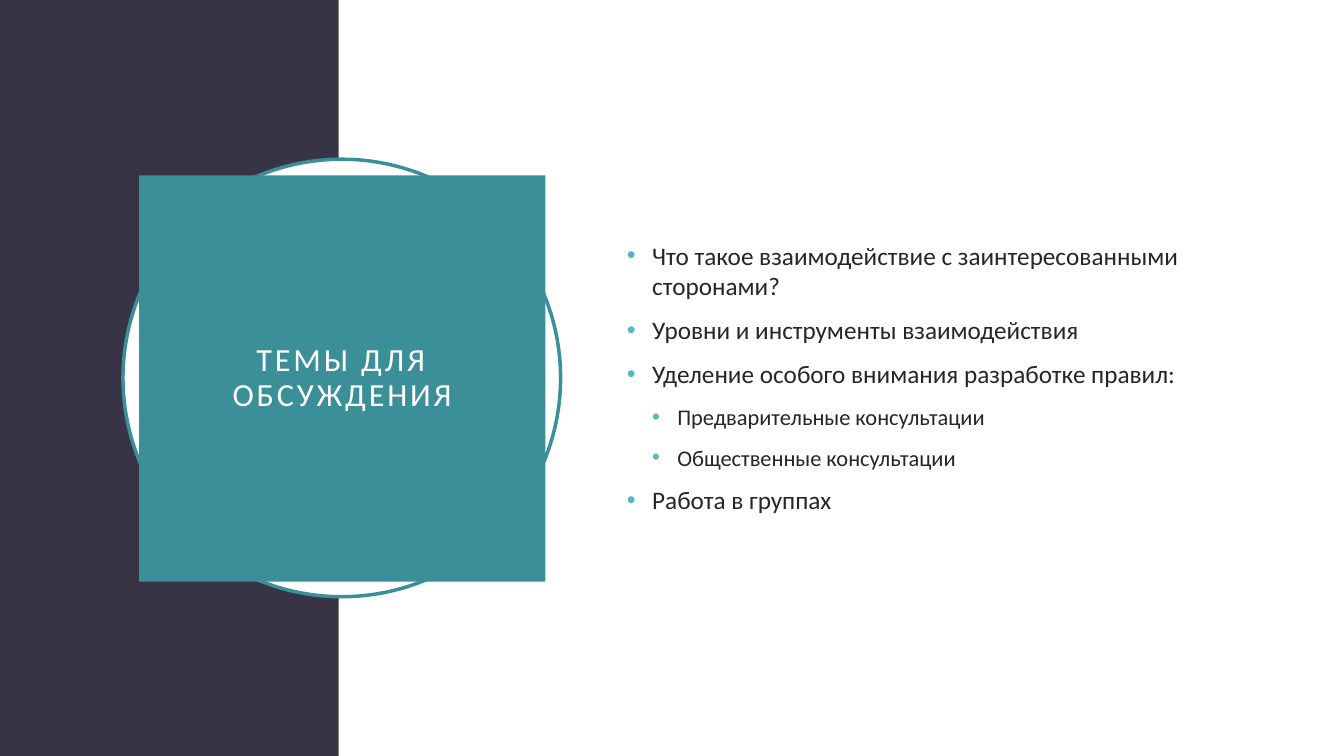
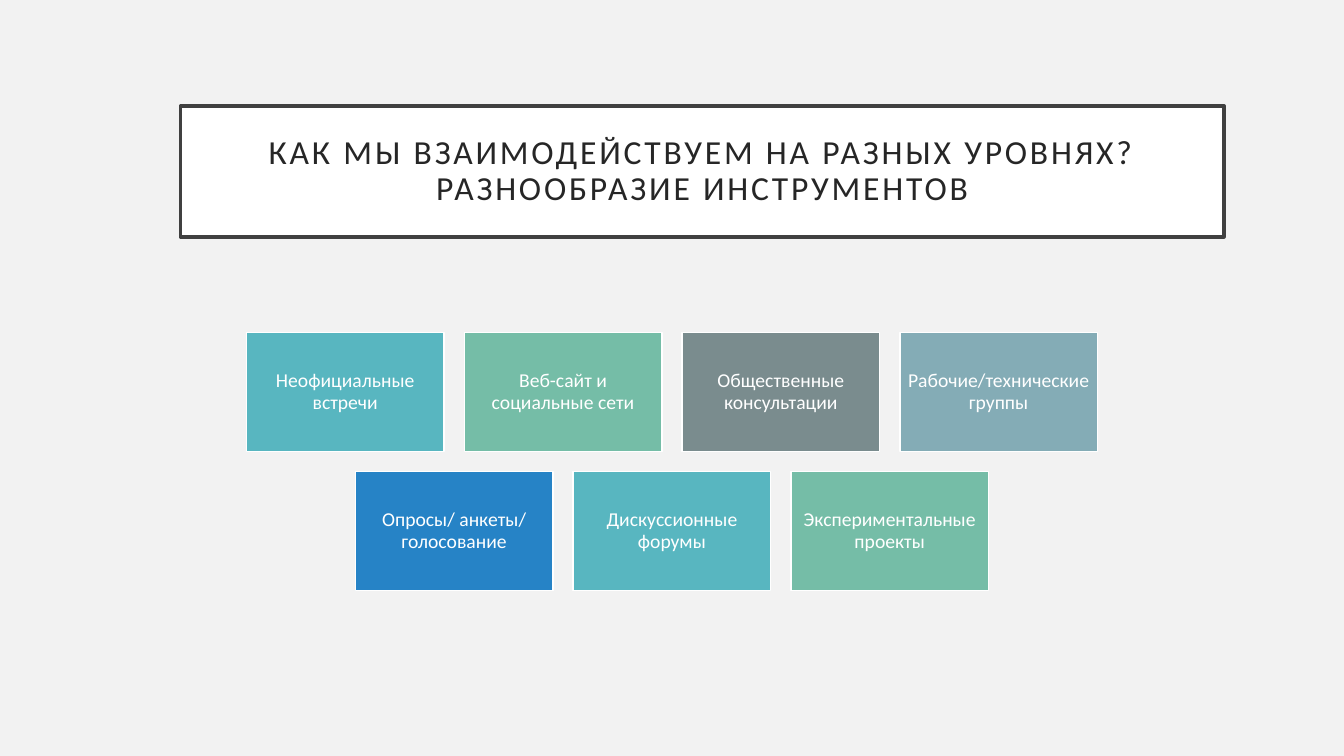
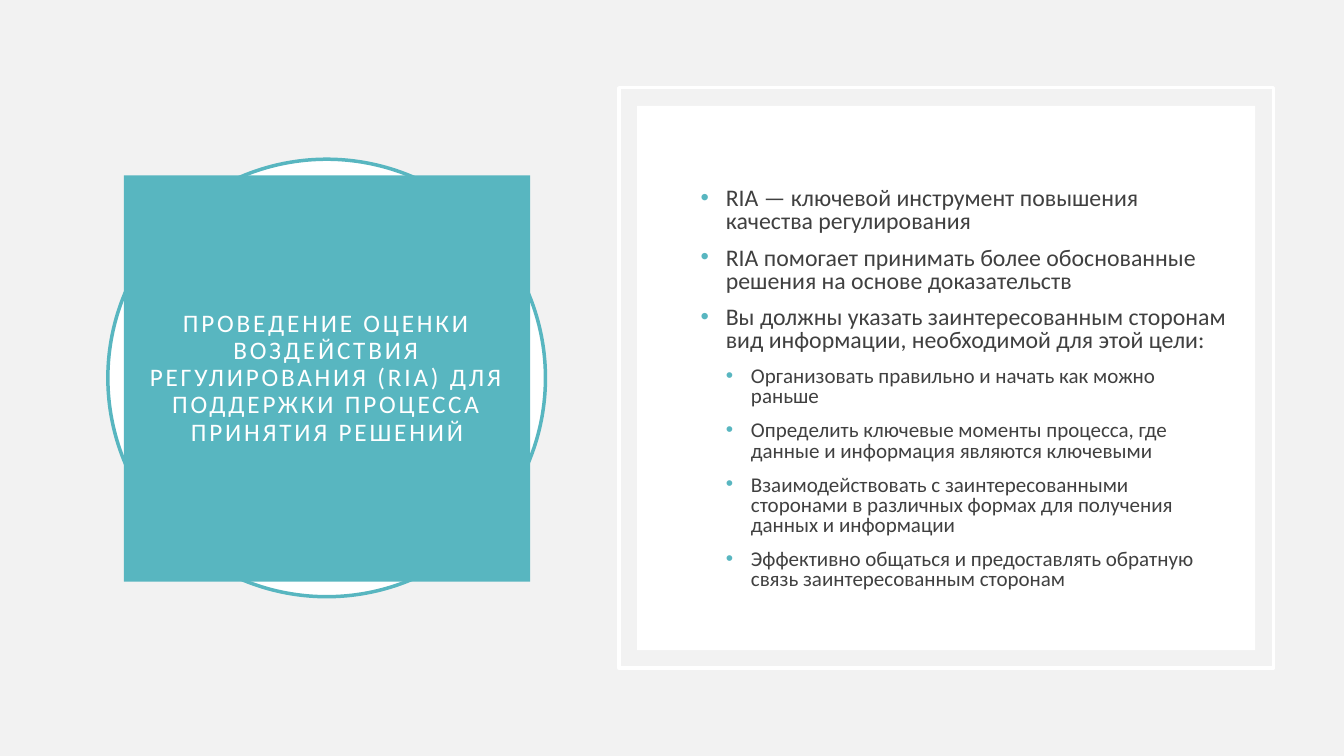
from lxml import etree
from pptx import Presentation
from pptx.dml.color import RGBColor
from pptx.enum import shapes, text
from pptx.oxml import ns
from pptx.util import Inches, Pt

SLIDE_W, SLIDE_H = 13.33, 7.5
FONT = "Calibri"
WHITE = RGBColor(0xFF, 0xFF, 0xFF)
PALE = RGBColor(0xF2, 0xF2, 0xF2)
NAVY = RGBColor(0x37, 0x35, 0x45)
INK = RGBColor(0x26, 0x26, 0x26)
CHARCOAL = RGBColor(0x40, 0x40, 0x40)
TEAL = RGBColor(0x3A, 0x8F, 0x98)
AQUA = RGBColor(0x58, 0xB6, 0xC0)
GREEN = RGBColor(0x75, 0xBD, 0xA7)
GREY = RGBColor(0x7A, 0x8C, 0x8E)
STEEL = RGBColor(0x84, 0xAC, 0xB6)
BLUE = RGBColor(0x26, 0x83, 0xC6)

RECT = shapes.MSO_SHAPE.RECTANGLE
OVAL = shapes.MSO_SHAPE.OVAL

TOPICS = [
    (0, "Что такое взаимодействие с заинтересованными сторонами?"),
    (0, "Уровни и инструменты взаимодействия"),
    (0, "Уделение особого внимания разработке правил:"),
    (1, "Предварительные консультации"),
    (1, "Общественные консультации"),
    (0, "Работа в группах"),
]
TOOL_ROWS = [
    [
        ("Неофициальные встречи", AQUA),
        ("Веб-сайт и социальные сети", GREEN),
        ("Общественные консультации", GREY),
        ("Рабочие/технические группы", STEEL),
    ],
    [
        ("Опросы/ анкеты/ голосование", BLUE),
        ("Дискуссионные форумы", AQUA),
        ("Экспериментальные проекты", GREEN),
    ],
]
RIA_POINTS = [
    (0, "RIA — ключевой инструмент повышения качества регулирования"),
    (0, "RIA помогает принимать более обоснованные решения на основе доказательств"),
    (0, "Вы должны указать заинтересованным сторонам вид информации, необходимой для этой цели:"),
    (1, "Организовать правильно и начать как можно раньше"),
    (1, "Определить ключевые моменты процесса, где данные и информация являются ключевыми"),
    (1, "Взаимодействовать с заинтересованными сторонами в различных формах для получения данных и информации"),
    (1, "Эффективно общаться и предоставлять обратную связь заинтересованным сторонам"),
]


def add_slide(deck, background):
    slide = deck.slides.add_slide(deck.slide_layouts[6])
    slide.background.fill.solid()
    slide.background.fill.fore_color.rgb = background
    return slide


def add_block(slide, preset, box, fill=None, line=None, line_width=2.5):
    block = slide.shapes.add_shape(preset, *map(Inches, box))
    block.shadow.inherit = False
    if fill is None:
        block.fill.background()
    else:
        block.fill.solid()
        block.fill.fore_color.rgb = fill
    if line is None:
        block.line.fill.background()
    else:
        block.line.color.rgb = line
        block.line.width = Pt(line_width)
    return block


def add_run(paragraph, words, size, color):
    run = paragraph.add_run()
    run.text = words
    run.font.name = FONT
    run.font.size = Pt(size)
    run.font.color.rgb = color
    return run


def write_centred(block, words, size, color, inset):
    frame = block.text_frame
    frame.word_wrap = True
    frame.vertical_anchor = text.MSO_ANCHOR.MIDDLE
    frame.margin_left = frame.margin_right = Inches(inset)
    frame.margin_top = frame.margin_bottom = Inches(inset)
    paragraph = frame.paragraphs[0]
    paragraph.alignment = text.PP_ALIGN.CENTER
    paragraph.line_spacing = 0.9
    return add_run(paragraph, words, size, color)


def write_title(block, words, size, color):
    run = write_centred(block, words, size, color, 0.2)
    run.font._element.set("spc", "200")


def add_title_badge(slide, left, words, size, color):
    add_block(slide, OVAL, (left, 1.58, 4.34, 4.34), WHITE, color)
    square = add_block(slide, RECT, (left + 0.16, 1.74, 4.03, 4.03), color)
    write_title(square, words, size, WHITE)


def add_bullet(paragraph, level):
    properties = paragraph._p.get_or_add_pPr()
    properties.set("marL", str(Inches(0.25 * (level + 1))))
    properties.set("indent", str(Inches(-0.25)))
    tint = etree.SubElement(properties, ns.qn("a:buClr"))
    etree.SubElement(tint, ns.qn("a:srgbClr"), val=str(AQUA))
    etree.SubElement(properties, ns.qn("a:buFont"), typeface="Arial")
    etree.SubElement(properties, ns.qn("a:buChar"), char="•")


def add_bullet_list(slide, box, points, sizes, color, line_spacing):
    frame = slide.shapes.add_textbox(*map(Inches, box)).text_frame
    frame.word_wrap = True
    frame.vertical_anchor = text.MSO_ANCHOR.MIDDLE
    for index, (level, words) in enumerate(points):
        paragraph = frame.add_paragraph() if index else frame.paragraphs[0]
        paragraph.level = level
        paragraph.line_spacing = line_spacing
        paragraph.space_before = Pt(10)
        add_bullet(paragraph, level)
        add_run(paragraph, words, sizes[level], color)


def add_tool_cards(slide, rows):
    width, height, gap, top = 1.96, 1.18, 0.2, 3.3
    for row_index, row in enumerate(rows):
        row_width = len(row) * (width + gap) - gap
        left = (SLIDE_W - row_width) / 2
        y = top + row_index * (height + gap)
        for column, (words, color) in enumerate(row):
            x = left + column * (width + gap)
            card = add_block(slide, RECT, (x, y, width, height), color, WHITE, 1)
            write_centred(card, words, 14, WHITE, 0.06)


def build_topics(deck):
    slide = add_slide(deck, WHITE)
    add_block(slide, RECT, (0, 0, 3.36, SLIDE_H), NAVY)
    add_title_badge(slide, 1.22, "ТЕМЫ ДЛЯ ОБСУЖДЕНИЯ", 23, TEAL)
    add_bullet_list(slide, (6.12, 1.53, 5.82, 4.43), TOPICS, (18, 16), INK, 1.0)


def build_tools(deck):
    slide = add_slide(deck, PALE)
    banner = add_block(slide, RECT, (1.79, 1.05, 10.35, 1.3), WHITE, CHARCOAL)
    write_title(banner, "КАК МЫ ВЗАИМОДЕЙСТВУЕМ НА РАЗНЫХ УРОВНЯХ? РАЗНООБРАЗИЕ ИНСТРУМЕНТОВ", 24, INK)
    add_tool_cards(slide, TOOL_ROWS)


def build_ria(deck):
    slide = add_slide(deck, PALE)
    add_title_badge(
        slide, 1.07,
        "ПРОВЕДЕНИЕ ОЦЕНКИ ВОЗДЕЙСТВИЯ РЕГУЛИРОВАНИЯ (RIA) ДЛЯ ПОДДЕРЖКИ ПРОЦЕССА ПРИНЯТИЯ РЕШЕНИЙ",
        18, AQUA)
    add_block(slide, RECT, (6.14, 0.87, 6.49, 5.76), line=WHITE)
    add_block(slide, RECT, (6.32, 1.05, 6.13, 5.4), WHITE)
    add_bullet_list(slide, (6.85, 1.58, 5.42, 4.57), RIA_POINTS, (17, 15), CHARCOAL, 0.8)


def main():
    deck = Presentation()
    deck.slide_width = Inches(SLIDE_W)
    deck.slide_height = Inches(SLIDE_H)
    build_topics(deck)
    build_tools(deck)
    build_ria(deck)
    deck.save("out.pptx")


if __name__ == "__main__":
    main()
